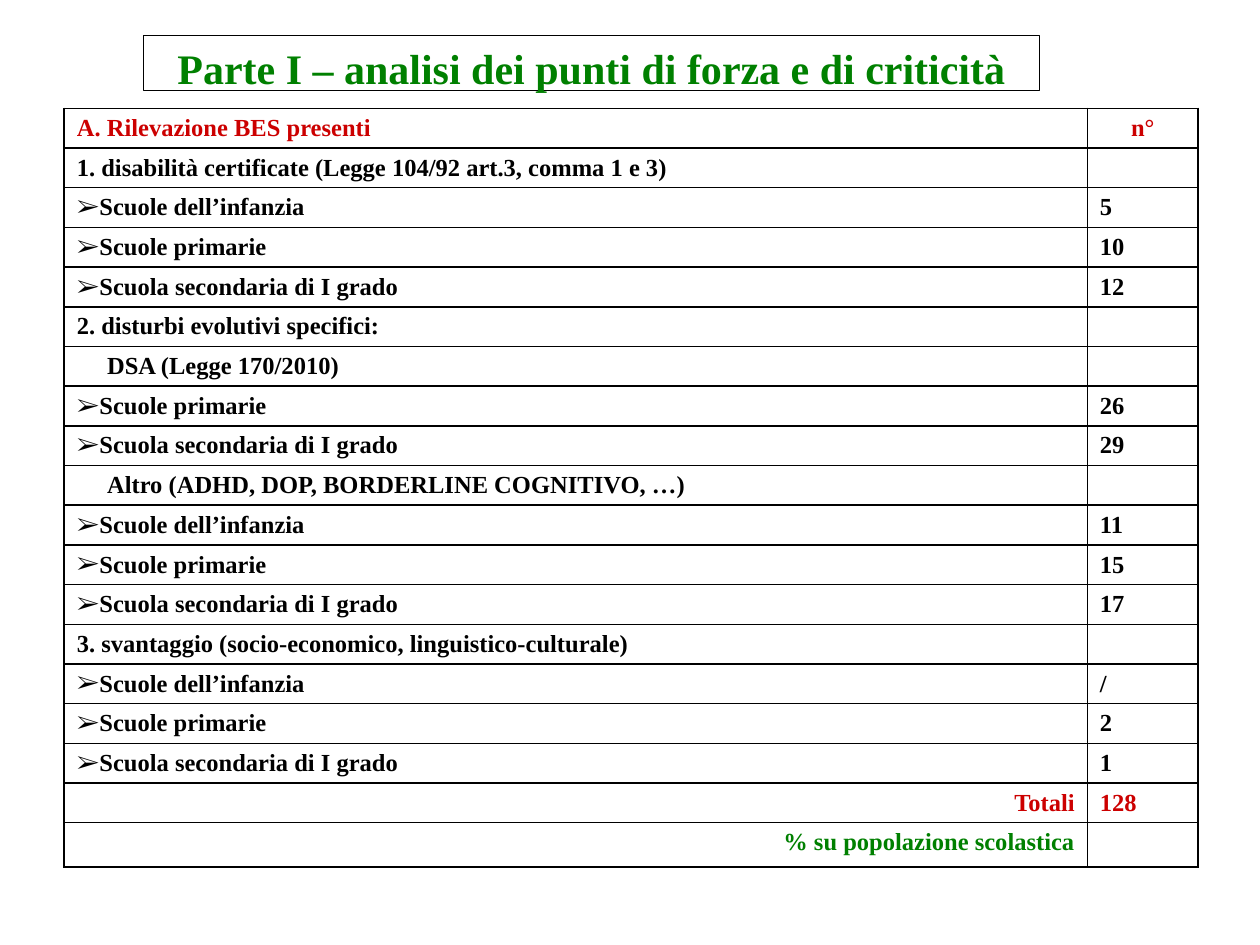
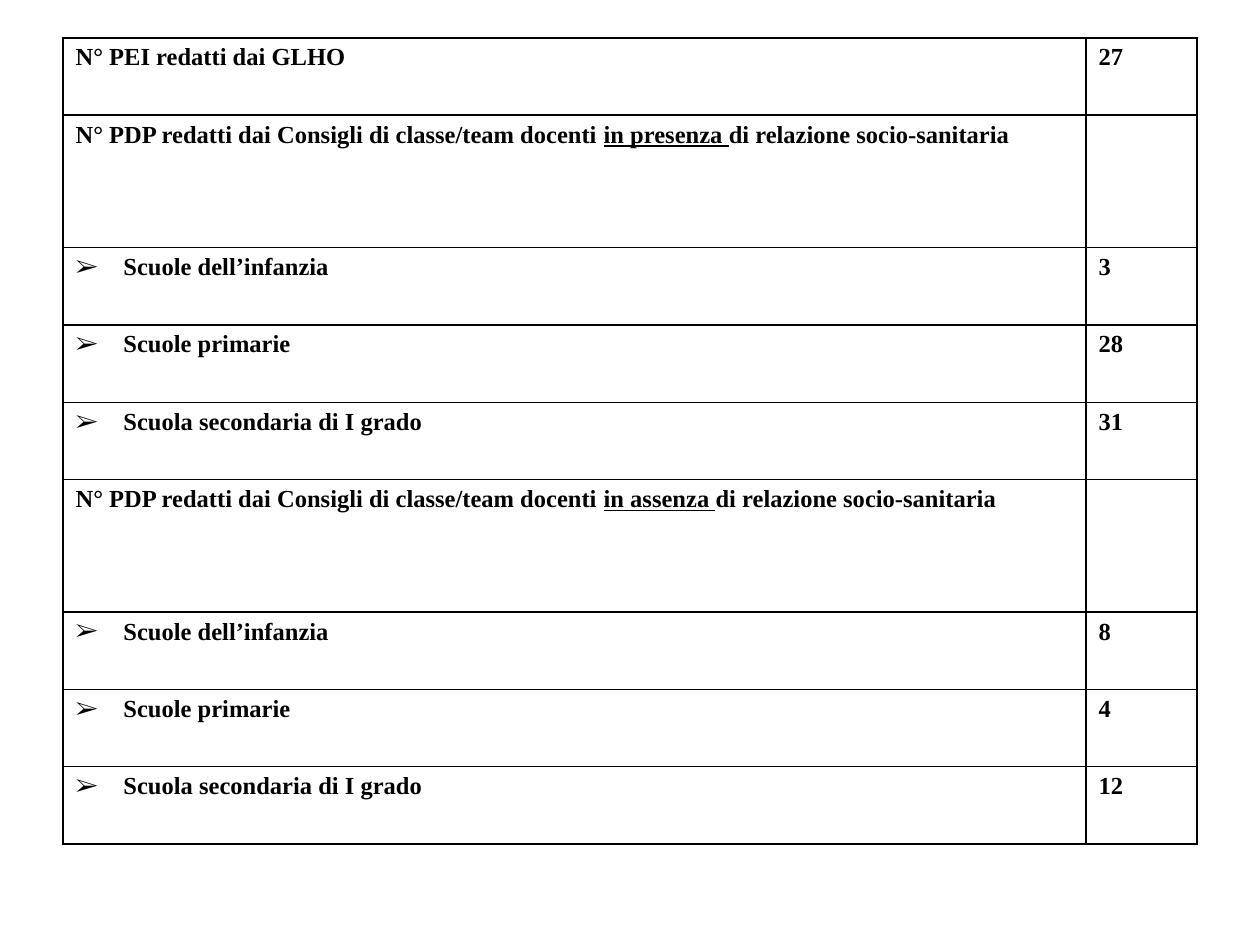
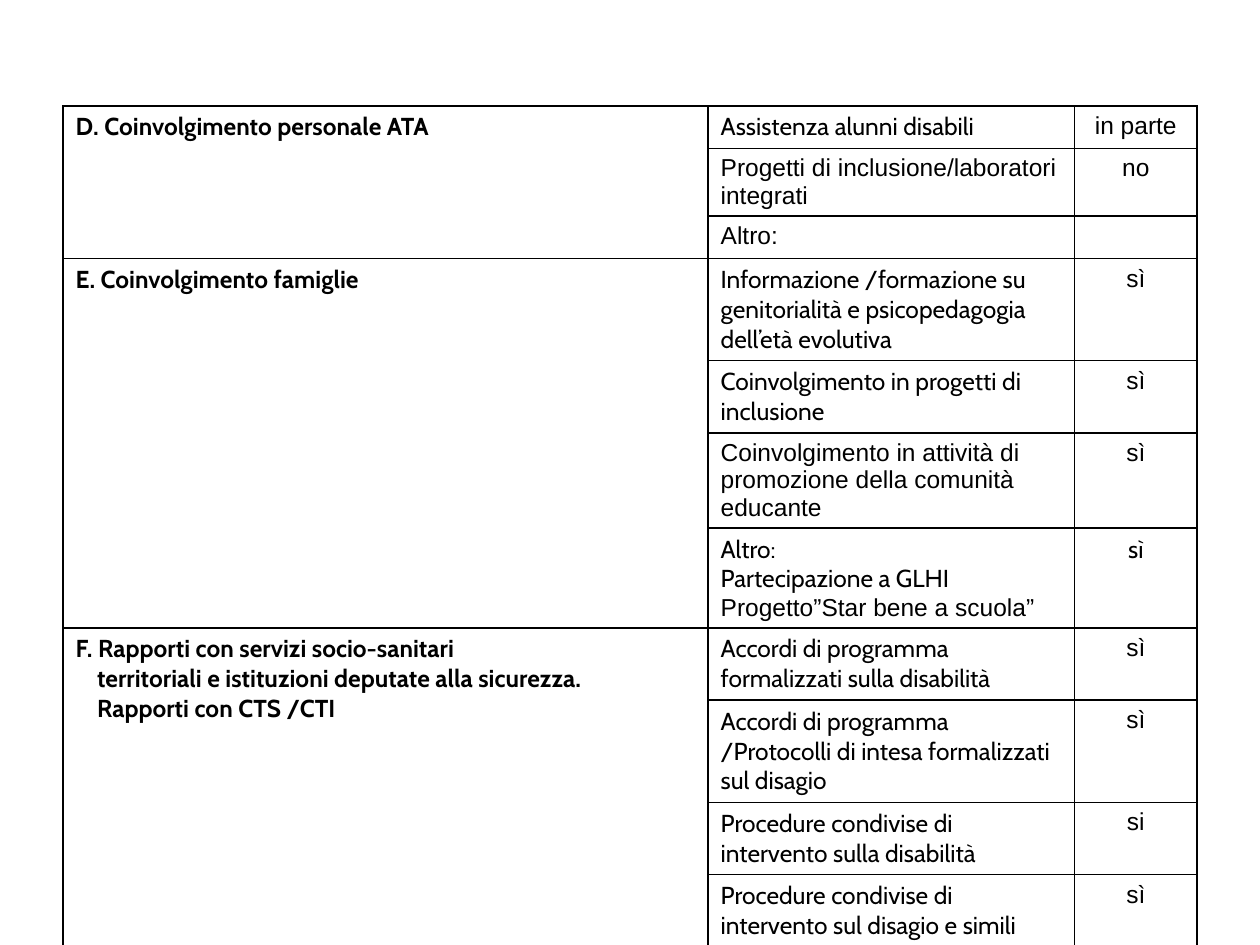
from dataclasses import dataclass

import pptx
import pptx.dml.color
import pptx.enum.text
import pptx.oxml
import pptx.oxml.ns
import pptx.util
from pptx.util import Inches

COLORS = {"black": "000000", "white": "FFFFFF", "red": "CC0000", "green": "008000"}
ALIGN = pptx.enum.text.PP_ALIGN
SERIF, SANS, CABIN = "Times New Roman", "Arial", "Cabin"
NURSERY, PRIMARY, SECONDARY = "Scuole dell’infanzia", "Scuole primarie", "Scuola secondaria di I grado"


@dataclass
class Line:
    """One paragraph; text between underscores is underlined."""
    text: str
    font: str = SERIF
    bold: bool = True
    color: str = "black"
    align: ALIGN = ALIGN.LEFT
    bullet: bool = False
    indent: float = 0
    hanging: float = 0


class Report:
    def __init__(self):
        self.deck = pptx.Presentation()
        self.deck.slide_width, self.deck.slide_height = Inches(10), Inches(7.5)
        self.page = None

    def rgb(self, name):
        return pptx.dml.color.RGBColor.from_string(COLORS[name])

    def add_page(self, layout):
        self.page = self.deck.slides.add_slide(self.deck.slide_layouts.get_by_name(layout))

    def format_paragraph(self, para, line, size=14):
        para.alignment = line.align
        para.font.name, para.font.size = line.font, pptx.util.Pt(size)
        para.font.bold = line.bold
        para.font.color.rgb = self.rgb(line.color)
        for index, part in enumerate(line.text.split("_")):
            if part:
                span = para.add_run()
                span.text = part
                if index % 2:
                    span.font.underline = True
        properties = para._p.get_or_add_pPr()
        properties.set("marL", str(Inches(line.indent)))
        properties.set("indent", str(-Inches(line.hanging)))
        if line.bullet:
            for tag in (f'buFont {pptx.oxml.ns.nsdecls("a")} typeface="{SERIF}"',
                        f'buChar {pptx.oxml.ns.nsdecls("a")} char="➢"'):
                properties.insert_element_before(
                    pptx.oxml.parse_xml(f"<a:{tag}/>"), "a:tabLst", "a:defRPr", "a:extLst")

    def title(self, text, left, top, width, height):
        box = self.page.shapes.title
        box.left, box.top, box.width, box.height = map(Inches, (left, top, width, height))
        box.fill.solid()
        box.fill.fore_color.rgb = self.rgb("white")
        box.line.color.rgb = self.rgb("black")
        box.line.width = pptx.util.Pt(0.75)
        frame = box.text_frame
        frame.auto_size = pptx.enum.text.MSO_AUTO_SIZE.NONE
        frame.vertical_anchor = pptx.enum.text.MSO_ANCHOR.TOP
        frame.margin_top, frame.margin_bottom = Inches(0.06), 0
        line = Line(text, color="green", align=ALIGN.CENTER)
        self.format_paragraph(frame.paragraphs[0], line, 24)

    def border(self, cell):
        properties = cell._tc.get_or_add_tcPr()
        for index, side in enumerate(("lnL", "lnR", "lnT", "lnB")):
            properties.insert(index, pptx.oxml.parse_xml(
                f'<a:{side} {pptx.oxml.ns.nsdecls("a")} w="{pptx.util.Pt(1)}"><a:solidFill>'
                f'<a:srgbClr val="{COLORS["black"]}"/></a:solidFill></a:{side}>'))

    def table(self, left, top, widths, heights, rows, bottom_margin=0.05):
        """Each cell is a list of lines; None joins the cell above."""
        table = self.page.shapes.add_table(
            len(rows), len(widths), Inches(left), Inches(top),
            Inches(sum(widths)), Inches(sum(heights))).table
        table.first_row = table.horz_banding = False
        for column, width in zip(table.columns, widths):
            column.width = Inches(width)
        for row, height in zip(table.rows, heights):
            row.height = Inches(height)
        for row_index, row in enumerate(rows):
            for column_index, lines in enumerate(row):
                cell = table.cell(row_index, column_index)
                cell.fill.background()
                self.border(cell)
                cell.margin_top, cell.margin_bottom = Inches(0.05), Inches(bottom_margin)
                for index, line in enumerate(lines or []):
                    frame = cell.text_frame
                    para = frame.add_paragraph() if index else frame.paragraphs[0]
                    self.format_paragraph(para, line)
        self.merge_down(table, rows)

    def merge_down(self, table, rows):
        starts = [index for index, row in enumerate(rows) if row[0] is not None]
        for start, end in zip(starts, starts[1:] + [len(rows)]):
            if end - start > 1:
                table.cell(start, 0).merge(table.cell(end - 1, 0))


def count_row(text, count="", **style):
    return [[Line(text, **style)], [Line(count, color=style.get("color", "black"))]]


def school_rows(counts, **style):
    return [count_row(school, count, bullet=True, **style) for school, count in counts]


def add_survey(report):
    report.add_page("Title Only")
    report.title("Parte I – analisi dei punti di forza e di criticità", 1.14, 0.28, 7.11, 0.44)
    rows = [
        [[Line("A. Rilevazione BES presenti", color="red")],
         [Line("n°", color="red", align=ALIGN.CENTER)]],
        count_row("1. disabilità certificate (Legge 104/92 art.3, comma 1 e 3)"),
        *school_rows([(NURSERY, "5"), (PRIMARY, "10"), (SECONDARY, "12")]),
        count_row("2. disturbi evolutivi specifici:"),
        count_row("DSA (Legge 170/2010)", indent=0.24),
        *school_rows([(PRIMARY, "26"), (SECONDARY, "29")]),
        count_row("Altro (ADHD, DOP, BORDERLINE COGNITIVO, …)", indent=0.24),
        *school_rows([(NURSERY, "11"), (PRIMARY, "15"), (SECONDARY, "17")]),
        count_row("3. svantaggio (socio-economico, linguistico-culturale)"),
        *school_rows([(NURSERY, "/"), (PRIMARY, "2"), (SECONDARY, "1")]),
        count_row("Totali", "128", color="red", align=ALIGN.RIGHT),
        count_row("% su popolazione scolastica", color="green", align=ALIGN.RIGHT),
    ]
    last_height = 0.35
    regular = (6.02 - last_height) / (len(rows) - 1)
    heights = [regular] * (len(rows) - 1) + [last_height]
    report.table(0.51, 0.86, [8.12, 0.88], heights, rows, bottom_margin=0.04)


def add_plans(report):
    report.add_page("Blank")
    hang = {"indent": 0.38, "hanging": 0.38}
    rows = [count_row("N° PEI redatti dai GLHO", "27", **hang)]
    for condition, counts in (("presenza", ("3", "28", "31")), ("assenza", ("8", "4", "12"))):
        rows.append(count_row("N° PDP redatti dai Consigli di classe/team docenti "
                              f"_in {condition} _di relazione socio-sanitaria", **hang))
        rows += school_rows(zip((NURSERY, PRIMARY, SECONDARY), counts), **hang)
    group_height = 1.05
    regular = (6.4 - 2 * group_height) / (len(rows) - 2)
    heights = [group_height if index in (1, 5) else regular for index in range(len(rows))]
    report.table(0.5, 0.3, [8.12, 0.88], heights, rows)


def add_involvement(report):
    report.add_page("Blank")
    groups = [
        (["D. Coinvolgimento personale ATA"], [
            (0.33, "Assistenza alunni disabili", CABIN, "in parte"),
            (0.53, "Progetti di inclusione/laboratori integrati", SANS, "no"),
            (0.33, "Altro:", SANS, "")]),
        (["E. Coinvolgimento famiglie"], [
            (0.8, "Informazione /formazione su genitorialità e psicopedagogia dell’età evolutiva",
             CABIN, "sì"),
            (0.57, "Coinvolgimento in progetti di inclusione", CABIN, "sì"),
            (0.75, "Coinvolgimento in attività di promozione della comunità educante", SANS, "sì"),
            (0.78, "Altro:\nPartecipazione a GLHI\nProgetto”Star bene a scuola”", CABIN, "sì")]),
        (["F. Rapporti con servizi socio-sanitari",
          "territoriali e istituzioni deputate alla sicurezza.",
          "Rapporti con CTS /CTI"], [
            (0.57, "Accordi di programma formalizzati sulla disabilità", CABIN, "sì"),
            (0.8, "Accordi di programma /Protocolli di intesa formalizzati sul disagio",
             CABIN, "sì"),
            (0.57, "Procedure condivise di intervento sulla disabilità", CABIN, "si"),
            (0.57, "Procedure condivise di intervento sul disagio e simili", CABIN, "sì")]),
    ]
    rows, heights = [], []
    for heading, items in groups:
        align = ALIGN.JUSTIFY if len(heading) > 1 else ALIGN.LEFT
        area = [Line(text, CABIN, align=align, indent=0.17 if index else 0)
                for index, text in enumerate(heading)]
        for height, text, font, answer in items:
            details = [Line(part, font, bold=False) for part in text.split("\n")]
            reply = Line(answer, SANS, bold=False, align=ALIGN.CENTER)
            if len(details) > 1:
                details[-1].font, reply.font = SANS, CABIN
            rows.append([area, details, [reply]])
            heights.append(height)
            area = None
    report.table(0.5, 0.84, [5.12, 2.91, 0.97], heights, rows)


def main():
    report = Report()
    add_survey(report)
    add_plans(report)
    add_involvement(report)
    report.deck.save("out.pptx")


if __name__ == "__main__":
    main()
